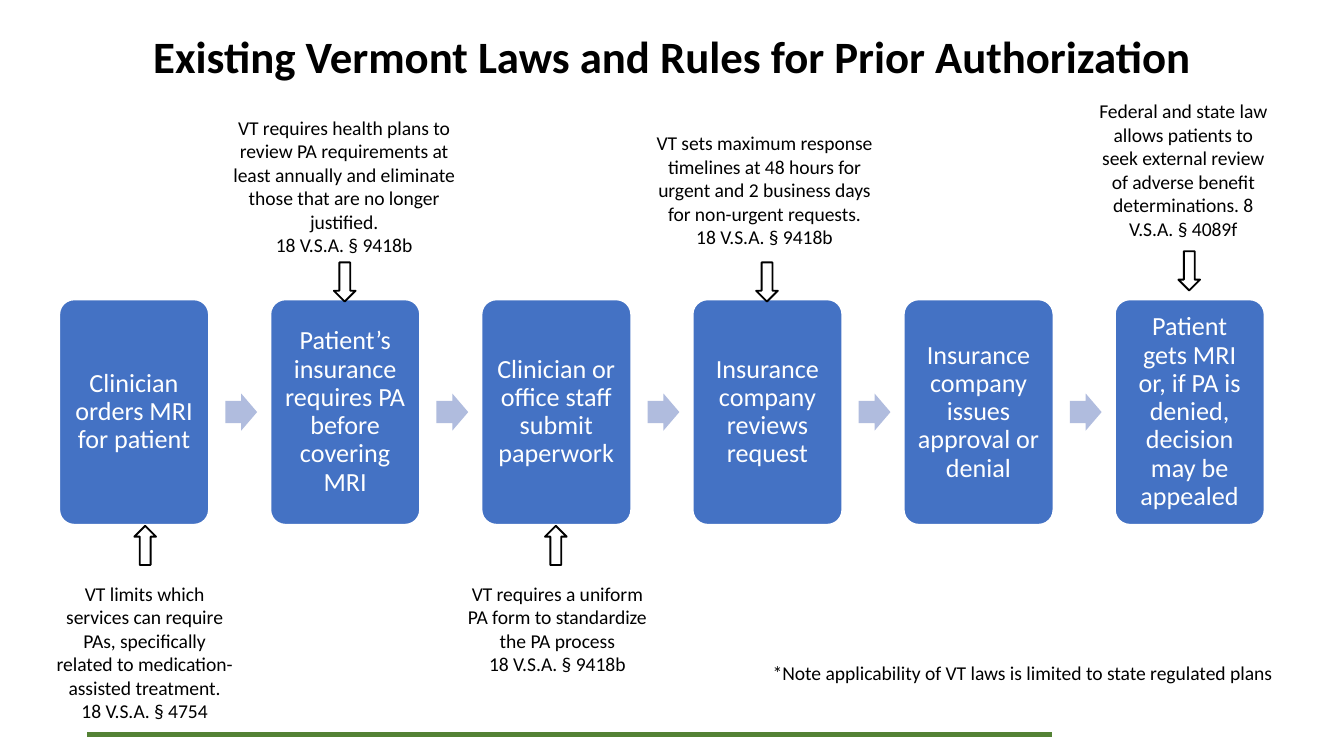
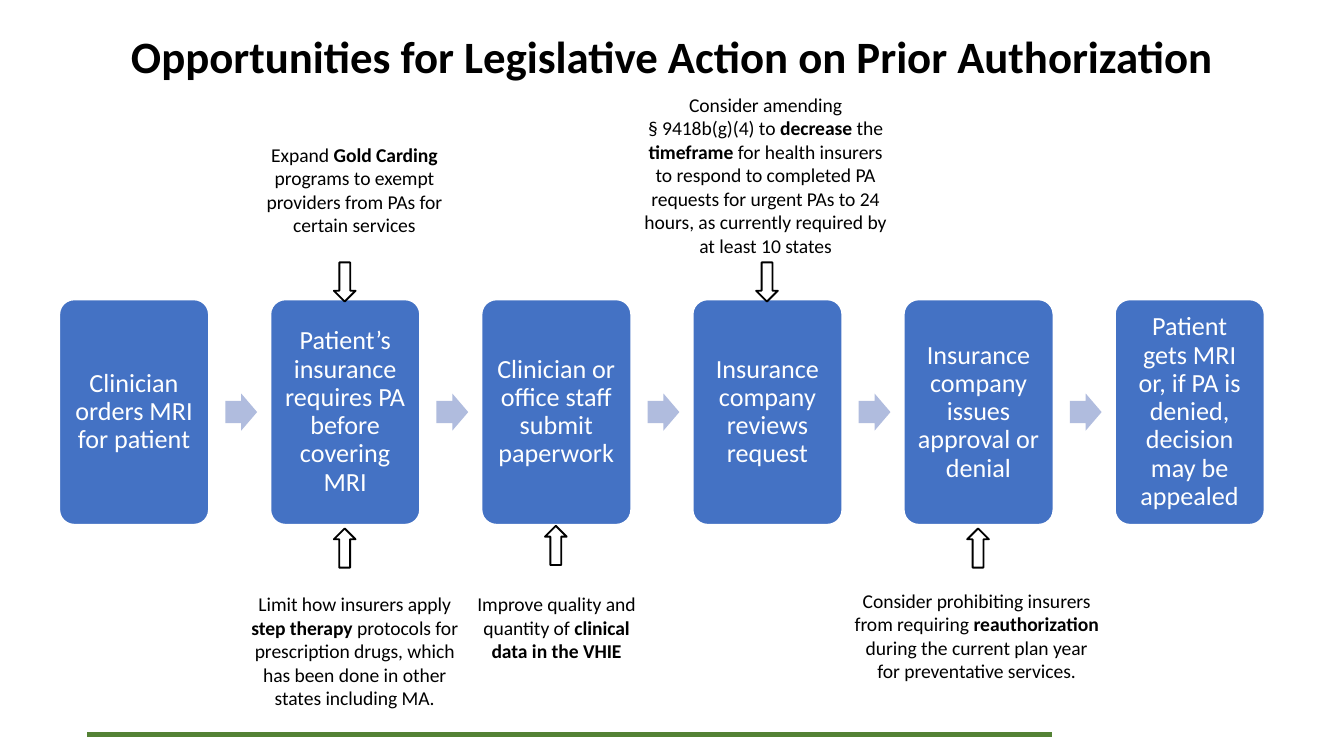
from dataclasses import dataclass

from lxml.etree import SubElement
from pptx import Presentation
from pptx.dml.color import RGBColor
from pptx.enum.shapes import MSO_CONNECTOR, MSO_SHAPE as Shape
from pptx.enum.text import MSO_ANCHOR as Anchor, MSO_AUTO_SIZE as AutoSize, PP_ALIGN as Align
from pptx.oxml.ns import qn
from pptx.util import Cm, Pt

# Shared style
FONT = "Calibri"
COLORS = {
    "step": "4472C4",
    "flow": "B0BCDE",
    "footer": "548235",
    "light": "FFFFFF",
    "dark": "000000",
}

# Process row, in centimetres
STEP_LEFT, STEP_TOP, STEP_W, STEP_H = 1.12, 5.66, 2.83, 4.26
STEP_PITCH = 3.99
FLOW_OFFSET, FLOW_W, FLOW_H = 3.14, 0.6, 0.7
POINTER_OFFSET, POINTER_W, POINTER_H = 1.2, 0.41, 0.74
ABOVE, BELOW = 4.96, 9.94

STEPS = [
    "Clinician orders MRI for patient",
    "Patient’s insurance requires PA before covering MRI",
    "Clinician or office staff submit paperwork",
    "Insurance company reviews request",
    "Insurance company issues approval or denial",
    "Patient gets MRI or, if PA is denied, decision may be appealed",
]


@dataclass
class Callout:
    """A remark tied to one step; **marks** in its paragraphs set bold."""
    step: int
    pointer_top: float
    area: tuple
    paragraphs: list
    shift: float = 0


LAW_CALLOUTS = [
    Callout(0, BELOW, (0.79, 10.87, 3.89, 2.95), [
        "VT limits which services can require PAs, specifically related to "
        "medication-assisted treatment.",
        "18 V.S.A. § 4754"], shift=0.22),
    Callout(2, BELOW, (8.59, 10.87, 3.89, 2.49), [
        "VT requires a uniform PA form to standardize the PA process",
        "18 V.S.A. § 9418b"]),
    Callout(3, ABOVE, (12.14, 2.36, 4.62, 2.49), [
        "VT sets maximum response timelines at 48 hours for urgent and "
        "2 business days for non-urgent requests.",
        "18 V.S.A. § 9418b"]),
    Callout(1, ABOVE, (4.04, 2.06, 4.93, 2.95), [
        "VT requires health plans to review PA requirements at least annually "
        "and eliminate those that are no longer justified.",
        "18 V.S.A. § 9418b"]),
    Callout(5, 4.75, (20.42, 1.75, 3.89, 2.95), [
        "Federal and state law allows patients to seek external review of "
        "adverse benefit determinations. 8 V.S.A. § 4089f"]),
]

ACTION_CALLOUTS = [
    Callout(3, ABOVE, (11.89, 1.63, 5.16, 3.4), [
        "Consider amending",
        "§ 9418b(g)(4) to **decrease** the **timeframe **for health insurers to "
        "respond to completed PA requests for urgent PAs to 24 hours, as "
        "currently required by at least 10 states"]),
    Callout(1, ABOVE, (4.67, 2.57, 4.06, 2.06), [
        "Expand **Gold Carding **programs to exempt providers from PAs for "
        "certain services"]),
    Callout(1, 9.99, (4.47, 11.07, 4.47, 2.95), [
        "Limit how insurers apply **step therapy **protocols for prescription "
        "drugs, which has been done in other states including MA."]),
    Callout(4, 9.99, (15.88, 11, 5.16, 2.49), [
        "Consider prohibiting insurers from requiring **reauthorization** during "
        "the current plan year for preventative services."]),
    Callout(2, BELOW, (8.64, 11.07, 3.76, 1.6), [
        "Improve quality and quantity of **clinical data in the VHIE**"]),
]


def rgb(name):
    return RGBColor.from_string(COLORS[name])


def write(frame, paragraphs, size, color, align=Align.CENTER, spacing=None):
    """Fill a text frame, switching bold at each ** mark."""
    frame.word_wrap = True
    for i, text in enumerate(paragraphs):
        para = frame.paragraphs[0] if i == 0 else frame.add_paragraph()
        para.alignment = align
        if spacing:
            para.line_spacing = spacing
        for j, part in enumerate(text.split("**")):
            if part:
                run = para.add_run()
                run.text = part
                run.font.name = FONT
                run.font.size = Pt(size)
                run.font.bold = j % 2 == 1
                run.font.color.rgb = rgb(color)


def add_block(slide, preset, area, fill=None, line=None):
    block = slide.shapes.add_shape(preset, *map(Cm, area))
    block.shadow.inherit = False
    if fill:
        block.fill.solid()
        block.fill.fore_color.rgb = rgb(fill)
    else:
        block.fill.background()
    if line:
        block.line.color.rgb = rgb(line)
        block.line.width = Pt(1)
    else:
        block.line.fill.background()
    return block


def add_footer_rule(slide):
    rule = slide.shapes.add_connector(
        MSO_CONNECTOR.STRAIGHT, Cm(1.65), Cm(13.88), Cm(19.89), Cm(13.88))
    rule.line.color.rgb = rgb("footer")
    rule.line.width = Pt(2.75)
    SubElement(rule.line._get_or_add_ln().getparent(), qn("a:effectLst"))


def add_title(slide, title):
    frame = slide.shapes.add_textbox(Cm(1.75), Cm(0.94), Cm(21.9), Cm(0.36)).text_frame
    frame.vertical_anchor = Anchor.MIDDLE
    write(frame, [f"**{title}**"], 24, "dark", spacing=0.9)


def add_remark(slide, area, paragraphs, align=Align.CENTER):
    frame = slide.shapes.add_textbox(*map(Cm, area)).text_frame
    write(frame, paragraphs, 10.5, "dark", align)
    frame.auto_size = AutoSize.SHAPE_TO_FIT_TEXT


def add_process(slide):
    for i, label in enumerate(STEPS):
        left = STEP_LEFT + i * STEP_PITCH
        step = add_block(slide, Shape.ROUNDED_RECTANGLE,
                         (left, STEP_TOP, STEP_W, STEP_H), "step", "light")
        step.adjustments[0] = 0.1
        frame = step.text_frame
        frame.margin_left = frame.margin_right = Cm(0.15)
        frame.margin_top = frame.margin_bottom = Cm(0.15)
        frame.vertical_anchor = Anchor.MIDDLE
        write(frame, [label], 14, "light", spacing=0.9)
        # Arrow to the next step
        if i < len(STEPS) - 1:
            flow_top = STEP_TOP + (STEP_H - FLOW_H) / 2
            flow = add_block(slide, Shape.RIGHT_ARROW,
                             (left + FLOW_OFFSET, flow_top, FLOW_W, FLOW_H), "flow")
            flow.adjustments[0] = 0.6


def add_callout(slide, callout):
    left = STEP_LEFT + callout.step * STEP_PITCH + POINTER_OFFSET + callout.shift
    pointer = add_block(slide, Shape.UP_ARROW,
                        (left, callout.pointer_top, POINTER_W, POINTER_H), line="dark")
    if callout.pointer_top < STEP_TOP:
        pointer.rotation = 180
    add_remark(slide, callout.area, callout.paragraphs)


def add_process_slide(prs, title, callouts):
    slide = prs.slides.add_slide(prs.slide_layouts[6])
    add_footer_rule(slide)
    add_process(slide)
    add_title(slide, title)
    for callout in callouts:
        add_callout(slide, callout)
    return slide


def main():
    prs = Presentation()
    prs.slide_width, prs.slide_height = Cm(25.4), Cm(14.29)

    # Current law
    laws = add_process_slide(
        prs, "Existing Vermont Laws and Rules for Prior Authorization", LAW_CALLOUTS)
    add_remark(laws, (13.84, 12.37, 10.46, 0.71),
               ["*Note applicability of VT laws is limited to state regulated plans"],
               Align.RIGHT)

    # Proposed changes
    add_process_slide(
        prs, "Opportunities for Legislative Action on Prior Authorization", ACTION_CALLOUTS)

    prs.save("out.pptx")


if __name__ == "__main__":
    main()
